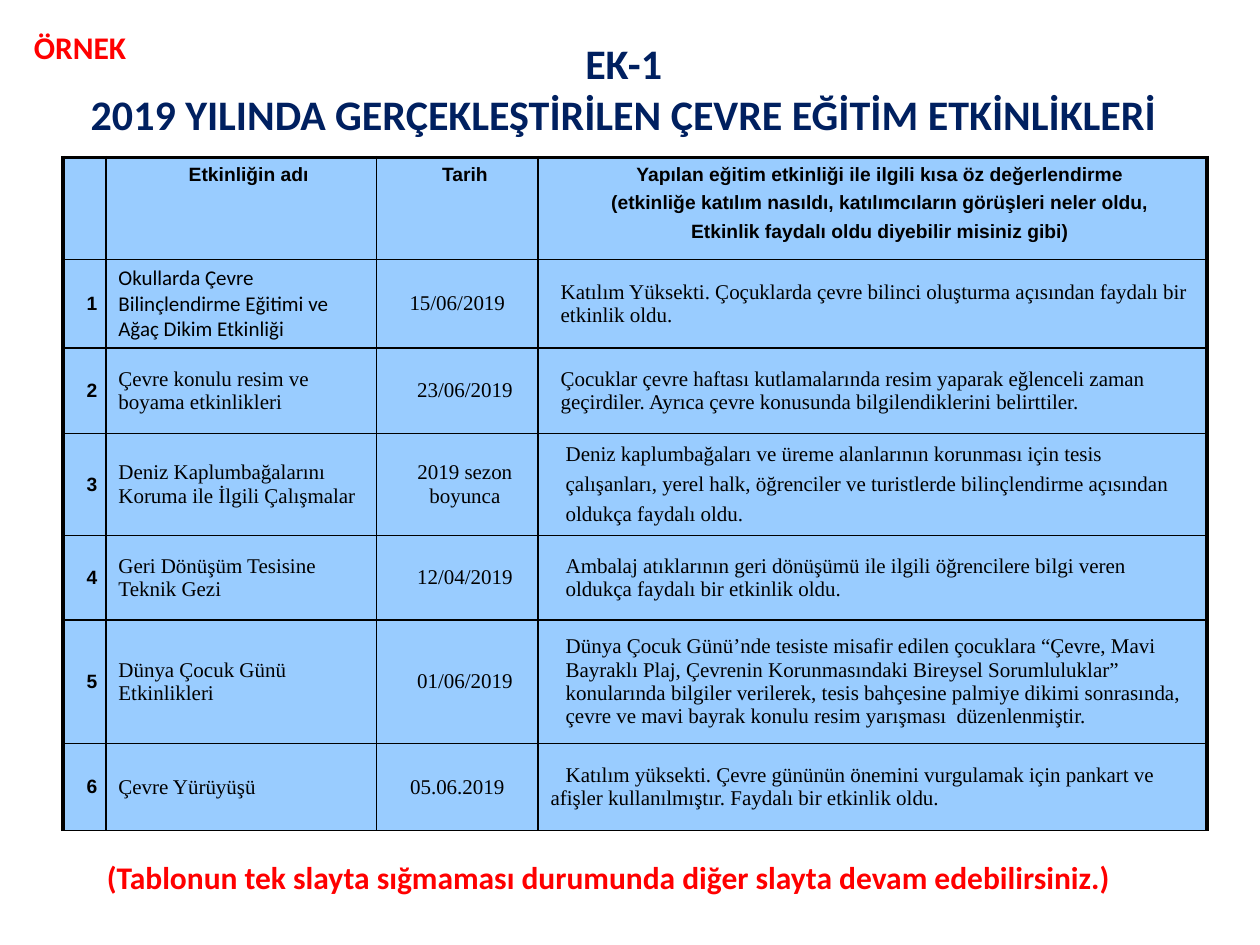
"""Build the 2019 environmental education activities slide."""
from dataclasses import dataclass

from lxml import etree
from pptx import Presentation
from pptx.dml.color import RGBColor
from pptx.enum.text import MSO_ANCHOR, MSO_AUTO_SIZE, PP_ALIGN
from pptx.oxml.ns import qn
from pptx.util import Inches, Pt

LEFT, CENTER = PP_ALIGN.LEFT, PP_ALIGN.CENTER
TOP, MIDDLE = MSO_ANCHOR.TOP, MSO_ANCHOR.MIDDLE
FIT_SHAPE = MSO_AUTO_SIZE.SHAPE_TO_FIT_TEXT
COLORS = {"title": "002060", "accent": "FF0000", "cell": "99CCFF", "ink": "000000"}
SANS, SERIF, BODY = "Arial", "Times New Roman", "Calibri"
INDENT = 0.12
COL_WIDTHS = (0.34, 2.15, 1.28, 5.31)
HEADER_HEIGHT = 0.81


@dataclass(frozen=True)
class Label:
    box: tuple[float, float, float, float]
    lines: tuple[str, ...]
    size: int
    color: str
    align: PP_ALIGN = LEFT
    wrap: bool = True


@dataclass(frozen=True)
class Style:
    font: str = SERIF
    size: int = 12
    bold: bool = False
    align: PP_ALIGN = LEFT
    indent: float = 0
    first: float = 0
    before: int = 0
    anchor: MSO_ANCHOR = MIDDLE


@dataclass(frozen=True)
class Activity:
    height: float
    name: tuple[str, ...]
    date: str
    review: tuple[str, ...]
    name_style: Style = Style()
    date_style: Style = Style(align=CENTER, indent=INDENT)
    review_style: Style = Style(indent=INDENT, before=4)


HEADER = Style(SANS, 11, True, CENTER, INDENT, before=4, anchor=TOP)
NUMBER = Style(SANS, 11, True, CENTER, INDENT)
CENTERED = Style(align=CENTER)
NEAR = Style(indent=0.08)

LABELS = (
    Label((0.58, 0.25, 8.74, 0.91),
          ("EK-1", "2019 YILINDA GERÇEKLEŞTİRİLEN ÇEVRE EĞİTİM ETKİNLİKLERİ"),
          24, "title", CENTER, False),
    Label((0.75, 6.76, 8.83, 0.4),
          ("(Tablonun tek slayta sığmaması durumunda diğer slayta devam edebilirsiniz.)",),
          18, "accent"),
    Label((0.17, 0.17, 1.42, 0.42), ("ÖRNEK",), 18, "accent"),
)
HEADINGS = (
    (),
    ("Etkinliğin adı",),
    ("Tarih",),
    ("Yapılan eğitim etkinliği ile ilgili kısa öz değerlendirme",
     "(etkinliğe katılım nasıldı, katılımcıların görüşleri neler oldu,",
     "Etkinlik faydalı oldu diyebilir misiniz gibi)"),
)
ACTIVITIES = (
    Activity(0.7, ("Okullarda Çevre", "Bilinçlendirme Eğitimi ve", "Ağaç Dikim Etkinliği"),
             "15/06/2019",
             ("Katılım Yüksekti. Çoçuklarda çevre bilinci oluşturma açısından faydalı bir",
              "etkinlik oldu."),
             name_style=Style(BODY), date_style=CENTERED, review_style=NEAR),
    Activity(0.68, ("Çevre konulu resim ve", "boyama etkinlikleri"), "23/06/2019",
             ("Çocuklar çevre haftası kutlamalarında resim yaparak eğlenceli zaman",
              "geçirdiler. Ayrıca çevre konusunda bilgilendiklerini belirttiler."),
             review_style=NEAR),
    Activity(0.81, ("Deniz Kaplumbağalarını", "Koruma ile İlgili Çalışmalar"),
             "2019 sezon boyunca",
             ("Deniz kaplumbağaları ve üreme alanlarının korunması için tesis",
              "çalışanları, yerel halk, öğrenciler ve turistlerde bilinçlendirme açısından",
              "oldukça faydalı oldu.")),
    Activity(0.67, ("Geri Dönüşüm Tesisine", "Teknik Gezi"), "12/04/2019",
             ("Ambalaj atıklarının geri dönüşümü ile ilgili öğrencilere bilgi veren "
              "oldukça faydalı bir etkinlik oldu.",)),
    Activity(0.98, ("Dünya Çocuk Günü", "Etkinlikleri"), "01/06/2019",
             ("Dünya Çocuk Günü’nde tesiste misafir edilen çocuklara “Çevre, Mavi "
              "Bayraklı Plaj, Çevrenin Korunmasındaki Bireysel Sorumluluklar” "
              "konularında bilgiler verilerek, tesis bahçesine palmiye dikimi sonrasında, "
              "çevre ve mavi bayrak konulu resim yarışması  düzenlenmiştir.",)),
    Activity(0.69, ("Çevre Yürüyüşü",), "05.06.2019",
             ("Katılım yüksekti. Çevre gününün önemini vurgulamak için pankart ve "
              "afişler kullanılmıştır. Faydalı bir etkinlik oldu.",),
             date_style=CENTERED, review_style=Style(first=INDENT)),
)


def rgb(name: str) -> RGBColor:
    """Return a named colour."""
    return RGBColor.from_string(COLORS[name])


def write(tf, lines: tuple[str, ...], style: Style, color: str) -> None:
    """Write one paragraph per line in the given style."""
    for i, line in enumerate(lines):
        p = tf.add_paragraph() if i else tf.paragraphs[0]
        p.text = line
        p.alignment = style.align
        pPr = p._p.get_or_add_pPr()
        pPr.set("marL", str(Inches(style.indent)))
        pPr.set("indent", str(Inches(style.first)))
        p.space_before = Pt(style.before if i else 0)
        p.font.name = style.font
        p.font.size = Pt(style.size)
        p.font.bold = style.bold
        p.font.color.rgb = rgb(color)


def add_label(slide, label: Label) -> None:
    """Add a bold text box."""
    sp = slide.shapes.add_textbox(*map(Inches, label.box))
    tf = sp.text_frame
    tf.word_wrap = label.wrap
    tf.auto_size = FIT_SHAPE
    write(tf, label.lines, Style(BODY, label.size, True, label.align), label.color)


def set_borders(cell, heavy: str) -> None:
    """Draw the four cell borders, thicker on the heavy sides."""
    tcPr = cell._tc.get_or_add_tcPr()
    for i, side in enumerate("LRTB"):
        ln = etree.Element(qn(f"a:ln{side}"), w=str(Pt(2.25 if side in heavy else 1)))
        fill = etree.SubElement(ln, qn("a:solidFill"))
        etree.SubElement(fill, qn("a:srgbClr"), val=COLORS["ink"])
        tcPr.insert(i, ln)


def add_activity_table(slide) -> None:
    """Add the numbered table of activities."""
    rows = [(HEADER_HEIGHT, [(lines, HEADER) for lines in HEADINGS])]
    for number, a in enumerate(ACTIVITIES, 1):
        rows.append((a.height, [((str(number),), NUMBER), (a.name, a.name_style),
                                ((a.date,), a.date_style), (a.review, a.review_style)]))
    width, height = sum(COL_WIDTHS), sum(h for h, _ in rows)
    table = slide.shapes.add_table(len(rows), len(COL_WIDTHS), Inches(0.5), Inches(1.25),
                                   Inches(width), Inches(height)).table
    table.first_row = table.horz_banding = False
    for col, w in zip(table.columns, COL_WIDTHS):
        col.width = Inches(w)
    last = len(COL_WIDTHS) - 1
    for r, (h, cells) in enumerate(rows):
        table.rows[r].height = Inches(h)
        for c, (lines, style) in enumerate(cells):
            cell = table.cell(r, c)
            cell.fill.solid()
            cell.fill.fore_color.rgb = rgb("cell")
            cell.vertical_anchor = style.anchor
            set_borders(cell, "L" * (c == 0) + "R" * (c == last) + "T" * (r == 0))
            write(cell.text_frame, lines, style, "ink")


def main() -> None:
    """Build and save the presentation."""
    prs = Presentation()
    prs.slide_width, prs.slide_height = Inches(10), Inches(7.5)
    slide = prs.slides.add_slide(prs.slide_layouts[6])
    for label in LABELS:
        add_label(slide, label)
    add_activity_table(slide)
    prs.save("out.pptx")


if __name__ == "__main__":
    main()
